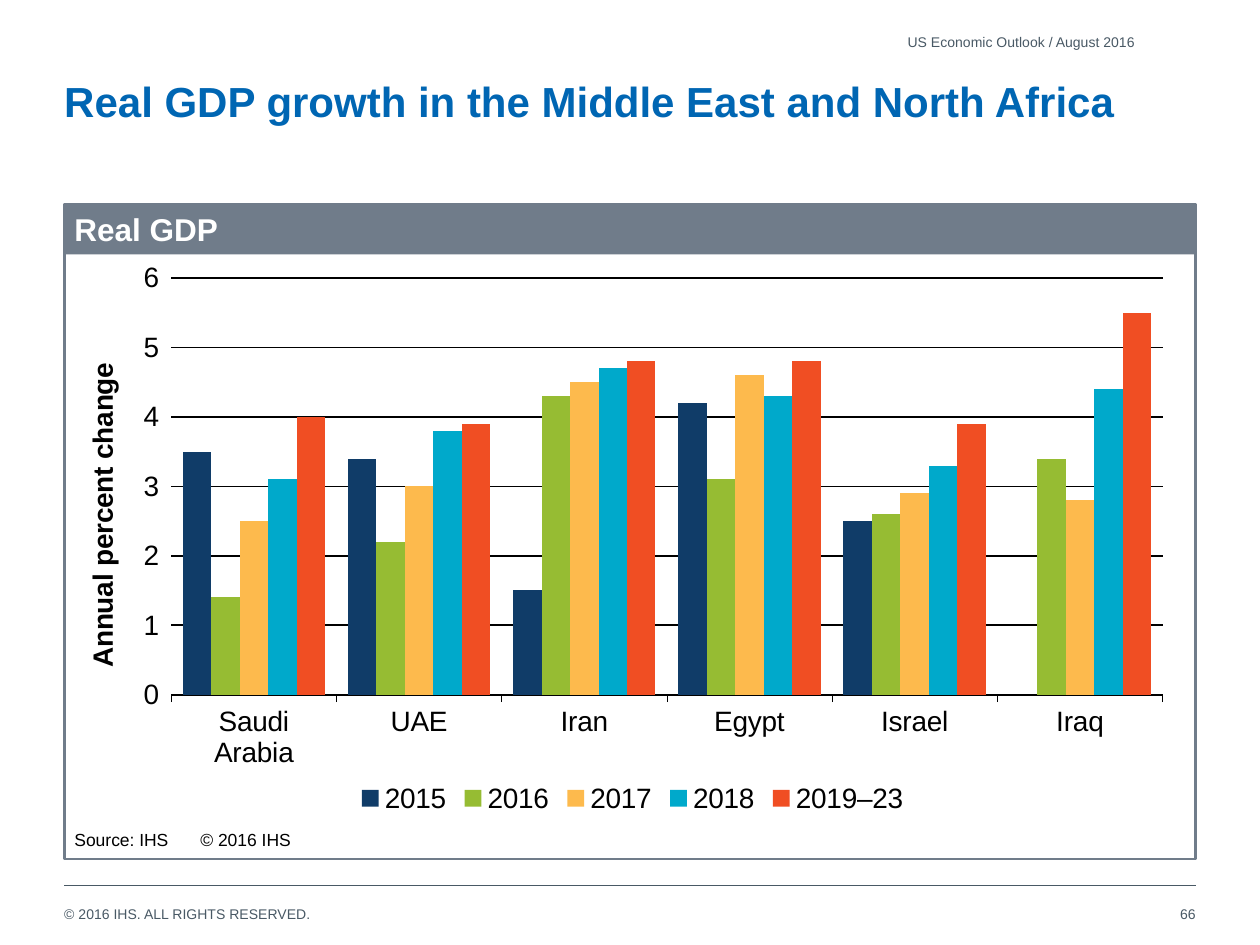
from dataclasses import dataclass

from lxml import etree
from pptx import Presentation
from pptx.chart.data import CategoryChartData
from pptx.dml.color import RGBColor
from pptx.enum import chart as ch, shapes, text
from pptx.oxml import ns
from pptx.util import Pt

FONT = "Arial"
GRAY, SLATE, BLACK = "495965", "707C8A", "000000"
LEFT, WIDTH = 36.7, 646.6
RIGHT = LEFT + WIDTH
FRAME_TOP, FRAME_H, BAND_H = 116.6, 374.4, 28.8
PLOT = {"x": 0.083, "y": 0.042, "w": 0.896, "h": 0.738}


@dataclass
class Box:
    x: float
    y: float
    w: float
    h: float

    def lengths(self):
        return Pt(self.x), Pt(self.y), Pt(self.w), Pt(self.h)


@dataclass
class Series:
    name: str
    color: str
    values: tuple


CATEGORIES = ("Saudi Arabia", "UAE", "Iran", "Egypt", "Israel", "Iraq")
SERIES = (
    Series("2015", "103C68", (3.5, 3.4, 1.5, 4.2, 2.5, -2)),
    Series("2016", "96BC33", (1.4, 2.2, 4.3, 3.1, 2.6, 3.4)),
    Series("2017", "FDBA4D", (2.5, 3, 4.5, 4.6, 2.9, 2.8)),
    Series("2018", "00A9CB", (3.1, 3.8, 4.7, 4.3, 3.3, 4.4)),
    Series("2019–23", "F04E23", (4, 3.9, 4.8, 4.8, 3.9, 5.5)),
)


def paint(fmt, color: str) -> None:
    if hasattr(fmt, "solid"):
        fmt.solid()
        fmt = fmt.fore_color
    else:
        fmt = fmt.color
    fmt.rgb = RGBColor.from_string(color)


def style_font(font, size: float, color: str, bold: bool = False) -> None:
    font.name, font.size, font.bold = FONT, Pt(size), bold
    paint(font.fill, color)


def style_line(line, color: str, width: float) -> None:
    paint(line.fill, color)
    line.width = Pt(width)


def write(sp, content: str, size: float = 8, color: str = GRAY, bold: bool = False,
          align=text.PP_ALIGN.LEFT, anchor=text.MSO_ANCHOR.MIDDLE,
          inset: tuple = (0, 0)) -> None:
    tf = sp.text_frame
    tf.word_wrap = True
    tf.auto_size = text.MSO_AUTO_SIZE.NONE
    tf.vertical_anchor = anchor
    tf.margin_left = tf.margin_right = Pt(inset[0])
    tf.margin_top = tf.margin_bottom = Pt(inset[1])
    p = tf.paragraphs[0]
    p.alignment = align
    r = p.add_run()
    r.text = content
    style_font(r.font, size, color, bold)


def add_text(s, box: Box, content: str, **fmt) -> None:
    write(s.shapes.add_textbox(*box.lengths()), content, **fmt)


def add_rect(s, box: Box):
    sp = s.shapes.add_shape(shapes.MSO_SHAPE.RECTANGLE, *box.lengths())
    sp.shadow.inherit = False
    return sp


def add_rule(s, y: float) -> None:
    line = s.shapes.add_connector(shapes.MSO_CONNECTOR.STRAIGHT,
                                  Pt(LEFT), Pt(y), Pt(RIGHT), Pt(y))
    style_line(line.line, GRAY, 0.5)
    etree.SubElement(line._element.spPr, ns.qn("a:effectLst"))


def place_plot(chart) -> None:
    area = chart._chartSpace.chart.plotArea
    for old in area.findall(ns.qn("c:layout")):
        area.remove(old)
    layout = etree.Element(ns.qn("c:layout"))
    manual = etree.SubElement(layout, ns.qn("c:manualLayout"))
    settings = {"layoutTarget": "inner", "xMode": "edge", "yMode": "edge", **PLOT}
    for tag, value in settings.items():
        etree.SubElement(manual, ns.qn(f"c:{tag}")).set("val", str(value))
    area.insert(0, layout)


def add_gdp_chart(s, box: Box) -> None:
    data = CategoryChartData(number_format="0.0")
    data.categories = CATEGORIES
    for item in SERIES:
        data.add_series(item.name, item.values)
    chart = s.shapes.add_chart(ch.XL_CHART_TYPE.COLUMN_CLUSTERED,
                               *box.lengths(), data).chart
    style_font(chart.font, 16, BLACK)
    chart.has_title = False
    chart.has_legend = True
    chart.legend.position = ch.XL_LEGEND_POSITION.BOTTOM
    chart.legend.include_in_layout = False

    plot = chart.plots[0]
    plot.gap_width, plot.overlap, plot.vary_by_categories = 80, 0, False
    for series, item in zip(plot.series, SERIES):
        series.invert_if_negative = False
        paint(series.format.fill, item.color)

    cat = chart.category_axis
    cat.tick_label_position = ch.XL_TICK_LABEL_POSITION.LOW
    cat.major_tick_mark = ch.XL_TICK_MARK.OUTSIDE
    style_line(cat.format.line, BLACK, 0.25)

    val = chart.value_axis
    val.minimum_scale, val.maximum_scale, val.major_unit = 0, 6, 1
    val.major_tick_mark = ch.XL_TICK_MARK.OUTSIDE
    val.tick_labels.number_format = "0"
    val.tick_labels.number_format_is_linked = False
    val.format.line.fill.background()
    style_line(val.major_gridlines.format.line, BLACK, 1)
    r = val.axis_title.text_frame.paragraphs[0].add_run()
    r.text = "Annual percent change"
    style_font(r.font, 16, BLACK, bold=True)
    place_plot(chart)


def main() -> None:
    prs = Presentation()
    prs.slide_width, prs.slide_height = Pt(720), Pt(540)
    s = prs.slides.add_slide(prs.slide_layouts[5])

    title = s.shapes.title
    title.left, title.top, title.width, title.height = Box(LEFT, 43.2, WIDTH, 62.6).lengths()
    write(title, "Real GDP growth in the Middle East and North Africa",
          size=24, color="0066B3", bold=True, anchor=text.MSO_ANCHOR.TOP)

    add_text(s, Box(LEFT, 517.7, 493.2, 9.4), "© 2016 IHS. ALL RIGHTS RESERVED.")
    add_rule(s, 506.2)
    add_gdp_chart(s, Box(45.4, FRAME_TOP + BAND_H, 632.2, 322.6))
    add_text(s, Box(520.6, 507.6, RIGHT - 520.6, 28.8), "66", align=text.PP_ALIGN.RIGHT)
    add_text(s, Box(LEFT, 15.1, 612, 17.3), "US Economic Outlook / August 2016",
             align=text.PP_ALIGN.RIGHT)

    band = add_rect(s, Box(LEFT, FRAME_TOP, WIDTH, BAND_H))
    paint(band.fill, SLATE)
    band.line.fill.background()
    write(band, "Real GDP", size=18, color="FFFFFF", bold=True, inset=(5.8, 2.9))

    frame = add_rect(s, Box(LEFT, FRAME_TOP, WIDTH, FRAME_H))
    frame.fill.background()
    style_line(frame.line, SLATE, 1.5)

    add_text(s, Box(LEFT, FRAME_TOP + FRAME_H - 22.3, WIDTH, 22.3),
             "Source: IHS\t© 2016 IHS", size=10, color=BLACK, inset=(5.8, 5.8))
    prs.save("out.pptx")


if __name__ == "__main__":
    main()
